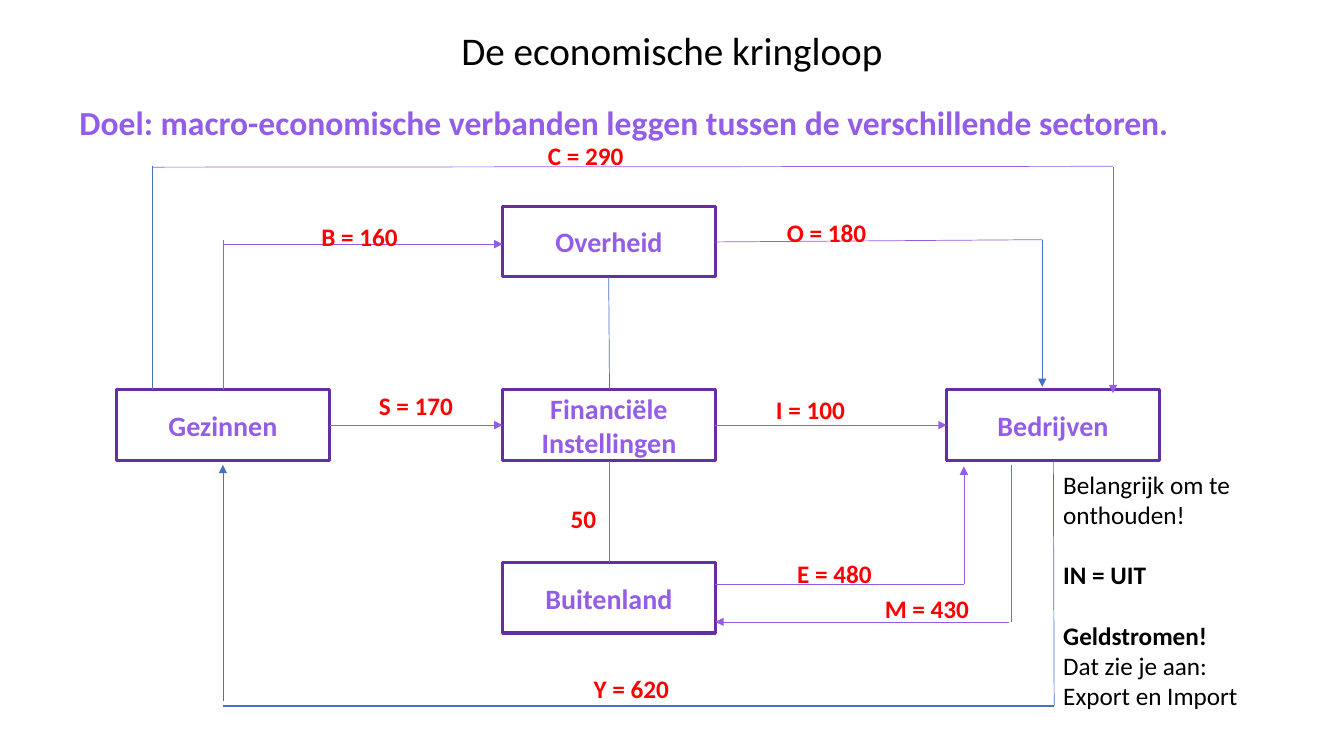
from lxml import etree
from pptx import Presentation
from pptx.dml.color import RGBColor
from pptx.enum.shapes import MSO_CONNECTOR, MSO_SHAPE
from pptx.enum.text import MSO_ANCHOR, PP_ALIGN
from pptx.oxml.ns import qn
from pptx.util import Pt

LEFT, CENTER = PP_ALIGN.LEFT, PP_ALIGN.CENTER
MIDDLE = MSO_ANCHOR.MIDDLE
RECT = MSO_SHAPE.RECTANGLE
STRAIGHT = MSO_CONNECTOR.STRAIGHT
LILAC, PURPLE, BLUE, RED = "945DE8", "652EA3", "4472C4", "FF0000"
BLACK, WHITE = "000000", "FFFFFF"
WIDE, HIGH = 152, 50.4

ink = RGBColor.from_string


def style(para, text, size, color, bold=False, align=LEFT):
    para.text = text
    para.alignment = align
    font = para.font
    font.name = "Calibri"
    font.size = Pt(size)
    font.bold = bold
    font.color.rgb = ink(color)


def add_box(left, top, width, height):
    box = shapes.add_textbox(Pt(left), Pt(top), Pt(width), Pt(height))
    box.text_frame.word_wrap = True
    return box.text_frame


deck = Presentation()
deck.slide_width = Pt(960)
deck.slide_height = Pt(540)
slide = deck.slides.add_slide(deck.slide_layouts[6])
shapes = slide.shapes

goal = add_box(49.7, 69, 861, 36)
goal.vertical_anchor = MIDDLE
style(goal.paragraphs[0],
      "Doel: macro-economische verbanden leggen tussen de verschillende sectoren.",
      24, LILAC, True)

sectors = [
    ("Overheid", 359, 147.4),
    ("Financiële Instellingen", 359, 278.4),
    ("Buitenland", 359, 401.8),
    ("Gezinnen", 83.3, 278.4),
    ("Bedrijven", 676.2, 278.4),
]
for name, left, top in sectors:
    box = shapes.add_shape(RECT, Pt(left), Pt(top), Pt(WIDE), Pt(HIGH))
    box.shadow.inherit = False
    box.fill.solid()
    box.fill.fore_color.rgb = ink(WHITE)
    box.line.color.rgb = ink(PURPLE)
    box.line.width = Pt(2.25)
    box.text_frame.word_wrap = True
    box.text_frame.vertical_anchor = MIDDLE
    style(box.text_frame.paragraphs[0], name, 20, LILAC, True, CENTER)

flows = [
    (752.4, 329, 753, 504, BLUE, 0.5, False),
    (753, 504, 159.2, 504, BLUE, 1.5, False),
    (159.2, 501, 159.2, 332, BLUE, 0.5, True),
    (235.4, 303.7, 359, 303.7, LILAC, 0.5, True),
    (159.2, 171.4, 159.2, 278.4, LILAC, 0.5, False),
    (159.2, 174.4, 359, 174.4, LILAC, 0.5, True),
    (108.8, 278.4, 108.8, 118.8, BLUE, 0.5, False),
    (109.2, 119.4, 795, 118.8, LILAC, 0.5, False),
    (795, 119.4, 795, 280.8, LILAC, 0.5, True),
    (511, 172.8, 744.5, 171.2, LILAC, 0.5, False),
    (744.5, 171.2, 744.5, 276.4, BLUE, 0.5, True),
    (434.8, 198, 435.4, 278.4, BLUE, 0.5, False),
    (435.4, 329, 435.4, 401.8, LILAC, 0.5, False),
    (511, 303.7, 676.2, 303.7, LILAC, 0.5, True),
    (511, 417.3, 688.5, 417.3, LILAC, 0.5, False),
    (688.5, 417, 688.5, 333.2, LILAC, 0.5, True),
    (722.3, 332, 722.3, 444.2, LILAC, 0.5, False),
    (720.7, 444.2, 511, 444.2, LILAC, 0.5, True),
]
for x1, y1, x2, y2, color, width, arrow in flows:
    line = shapes.add_connector(STRAIGHT, Pt(x1), Pt(y1), Pt(x2), Pt(y2))
    line.line.color.rgb = ink(color)
    line.line.width = Pt(width)
    if arrow:
        etree.SubElement(line.line._get_or_add_ln(), qn("a:tailEnd"), type="triangle")
    etree.SubElement(line._element.spPr, qn("a:effectLst"))

amounts = [
    ("B = 160", 222.5, 154.4),
    ("S = 170", 263.5, 275.2),
    ("50", 400.5, 355.6),
    ("Y = 620", 417, 477.6),
    ("E = 480", 562.3, 395),
    ("M = 430", 624.9, 420),
    ("I = 100", 547.2, 278.4),
    ("O = 180", 555, 151.6),
    ("C = 290", 384.2, 96.8),
]
for text, left, top in amounts:
    style(add_box(left, top, 84, 29).paragraphs[0], text, 18, RED, True)

notes = [
    ("Belangrijk om te onthouden!", False, 0),
    ("IN = UIT", True, 21.6),
    ("Geldstromen!", True, 21.6),
    ("Dat zie je aan:", False, 0),
    ("Export en Import", False, 0),
]
memo = add_box(752.4, 331.4, 160, 181.4)
for i, (text, bold, gap) in enumerate(notes):
    para = memo.add_paragraph() if i else memo.paragraphs[0]
    style(para, text, 18, BLACK, bold)
    if gap:
        para.space_before = Pt(gap)

title = add_box(168.5, 15.1, 622.8, 41)
style(title.paragraphs[0], "De economische kringloop", 28, BLACK, align=CENTER)

deck.save("out.pptx")
